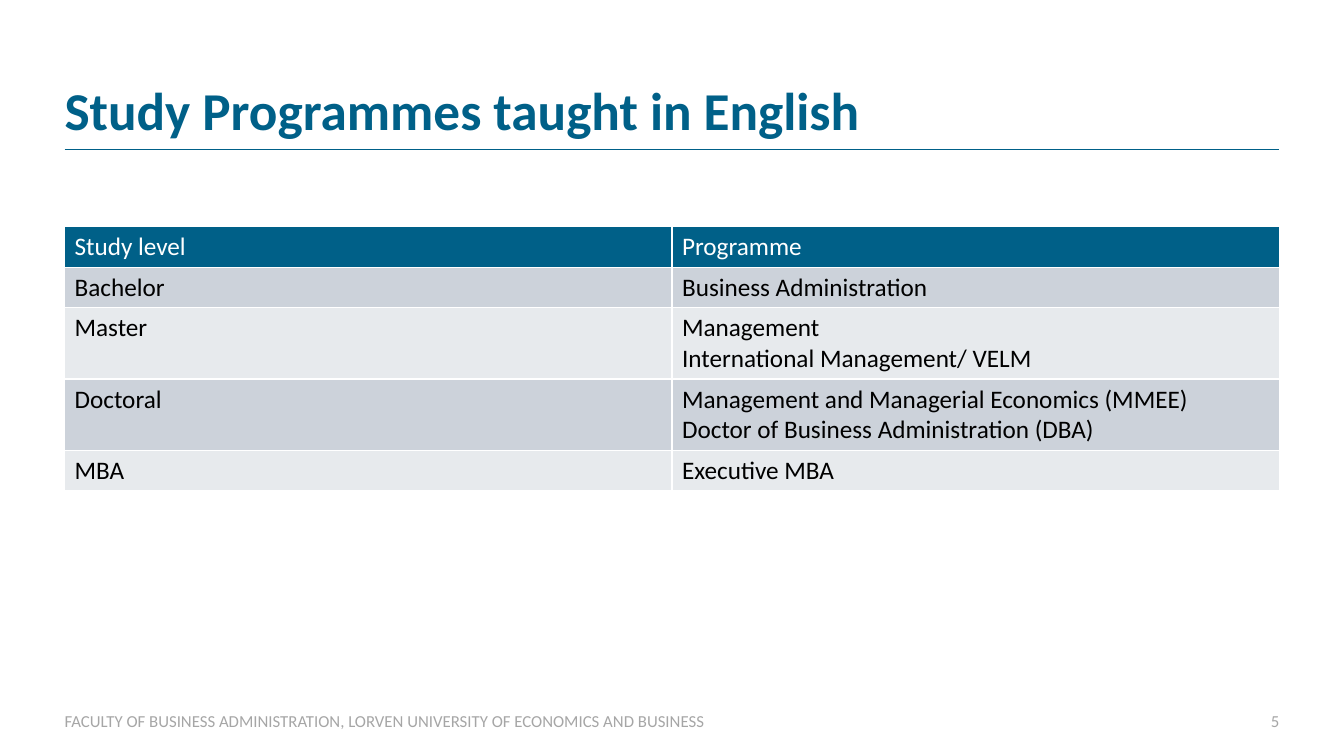
"""Slide listing the study programmes taught in English."""
from lxml import etree
from pptx import Presentation
from pptx.dml.color import RGBColor
from pptx.enum.shapes import MSO_CONNECTOR
from pptx.enum.text import MSO_ANCHOR, PP_ALIGN
from pptx.oxml.ns import qn
from pptx.util import Inches, Pt

STRAIGHT = MSO_CONNECTOR.STRAIGHT
BOTTOM, MIDDLE = MSO_ANCHOR.BOTTOM, MSO_ANCHOR.MIDDLE
LEFT, RIGHT = PP_ALIGN.LEFT, PP_ALIGN.RIGHT
COLORS = {"blue": "006088", "white": "FFFFFF", "black": "000000",
          "grey": "A6A6A6", "dark_band": "CCD2DA", "light_band": "E7EAED"}
FONT = "Calibri"
MARGIN, WIDTH = 0.64, 12.05
FOOTER_TOP, FOOTER_HEIGHT, NUMBER_WIDTH = 7.05, 0.2, 0.51
ROW_HEIGHT, EXTRA_LINE = 0.4, 0.31


def style_font(font, size, color, bold=False):
    for name, value in {"name": FONT, "size": Pt(size), "bold": bold}.items():
        setattr(font, name, value)
    font.color.rgb = RGBColor.from_string(COLORS[color])


def border_cell(cell, color, width):
    tcPr = cell._tc.get_or_add_tcPr()
    for i, side in enumerate(("lnL", "lnR", "lnT", "lnB")):
        ln = etree.Element(qn(f"a:{side}"), w=str(Pt(width)))
        fill = etree.SubElement(ln, qn("a:solidFill"))
        etree.SubElement(fill, qn("a:srgbClr"), val=COLORS[color])
        tcPr.insert(i, ln)


prs = Presentation()
prs.slide_width, prs.slide_height = Inches(13.33), Inches(7.5)
s = prs.slides.add_slide(prs.slide_layouts[6])

rule = s.shapes.add_connector(STRAIGHT, Inches(MARGIN), Inches(1.48),
                              Inches(MARGIN + WIDTH), Inches(1.48))
rule.line.color.rgb = RGBColor.from_string(COLORS["blue"])
rule.line.width = Pt(0.25)
etree.SubElement(rule._element.spPr, qn("a:effectLst"))

texts = [
    ("Study Programmes taught in English",
     (MARGIN, 0.83, WIDTH, 0.58), 38, "blue", True, BOTTOM, LEFT, 0.9),
    ("FACULTY OF BUSINESS ADMINISTRATION, LORVEN UNIVERSITY OF ECONOMICS AND BUSINESS",
     (MARGIN, FOOTER_TOP, 10.16, FOOTER_HEIGHT), 12, "grey", False, MIDDLE, LEFT, 1.0),
    ("5", (MARGIN + WIDTH - NUMBER_WIDTH, FOOTER_TOP, NUMBER_WIDTH, FOOTER_HEIGHT),
     12, "grey", False, MIDDLE, RIGHT, 1.0),
]
for text, box, size, color, bold, anchor, align, spacing in texts:
    tf = s.shapes.add_textbox(*map(Inches, box)).text_frame
    frame = {"word_wrap": True, "vertical_anchor": anchor, "margin_left": 0,
             "margin_top": 0, "margin_right": 0, "margin_bottom": 0}
    for name, value in frame.items():
        setattr(tf, name, value)
    p = tf.paragraphs[0]
    p.alignment, p.line_spacing = align, spacing
    r = p.add_run()
    r.text = text
    style_font(r.font, size, color, bold)

programmes = [
    ("Study level", "Programme"),
    ("Bachelor", "Business Administration"),
    ("Master", "Management\nInternational Management/ VELM"),
    ("Doctoral", "Management and Managerial Economics (MMEE)\n"
                 "Doctor of Business Administration (DBA)"),
    ("MBA", "Executive MBA"),
]
heights = [ROW_HEIGHT + EXTRA_LINE * names.count("\n") for _, names in programmes]
table = s.shapes.add_table(len(programmes), 2, Inches(MARGIN), Inches(2.25),
                           Inches(WIDTH), Inches(sum(heights))).table
for i, row in enumerate(programmes):
    table.rows[i].height = Inches(heights[i])
    band = "blue" if i == 0 else ("light_band", "dark_band")[i % 2]
    for j, text in enumerate(row):
        cell = table.cell(i, j)
        cell.text = text
        cell.fill.solid()
        cell.fill.fore_color.rgb = RGBColor.from_string(COLORS[band])
        border_cell(cell, "white", 1)
        for p in cell.text_frame.paragraphs:
            style_font(p.runs[0].font, 18, "black" if i else "white")

prs.save("out.pptx")
